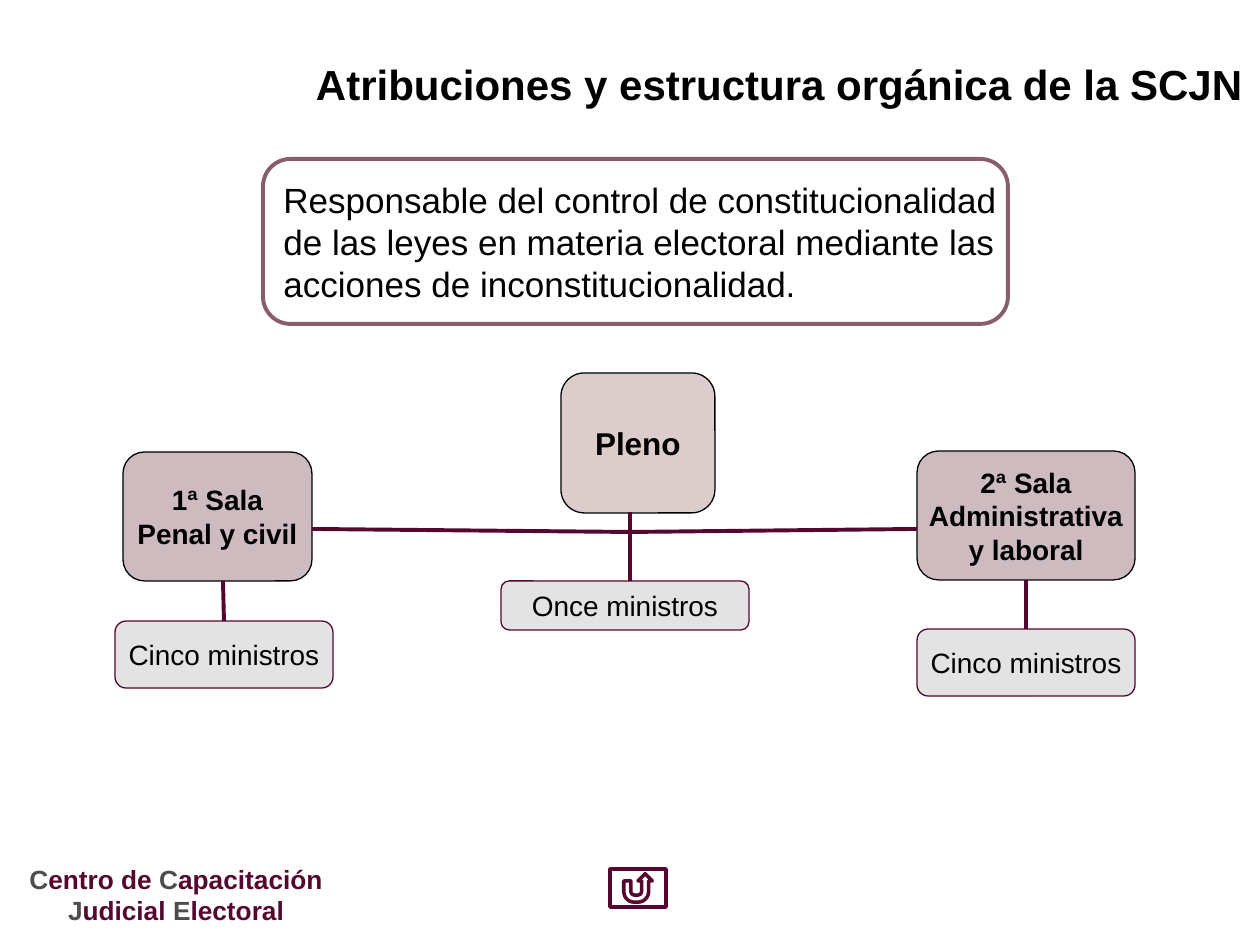
from lxml import etree
from pptx import Presentation
from pptx.dml.color import RGBColor
from pptx.enum import shapes, text
from pptx.oxml import ns
from pptx.util import Emu, Pt

PX = 914400 / 126
TOP, BOTTOM = 0, 2
COLORS = {
    "ink": "000000", "wine": "56072F", "footer": "560730", "gray": "4D4D4D",
    "mauve": "885E6A", "maroon": "580000", "silver": "C0C0C0",
}


def px(*values):
    return [Emu(round(value * PX)) for value in values]


def rgb(name):
    return RGBColor.from_string(COLORS[name])


def fill_shape(shape, color, opacity):
    """Fill with a colour at the given opacity in percent."""
    if color is None:
        shape.fill.background()
        return
    shape.fill.solid()
    shape.fill.fore_color.rgb = rgb(color)
    value = shape.fill._xPr.find(".//" + ns.qn("a:srgbClr"))
    etree.SubElement(value, ns.qn("a:alpha")).set("val", str(opacity * 1000))


def write(shape, lines, size=16, bold=False, align="CENTER", anchor="MIDDLE",
          wrap=False, spacing=None):
    """Write lines; each is a string or a list of (text, colour) spans."""
    frame = shape.text_frame
    frame.word_wrap = wrap
    frame.vertical_anchor = text.MSO_ANCHOR[anchor]
    for index, line in enumerate(lines):
        para = frame.add_paragraph() if index else frame.paragraphs[0]
        para.alignment = text.PP_ALIGN[align]
        if spacing:
            para.line_spacing = spacing
        for words, color in [(line, "ink")] if isinstance(line, str) else line:
            span = para.add_run()
            span.text = words
            span.font.name = "Arial"
            span.font.size = Pt(size)
            span.font.bold = bold
            span.font.color.rgb = rgb(color)


def add_preset(page, kind, place, fill=None, opacity=100, line="ink", width=0.75):
    shape = page.shapes.add_shape(shapes.MSO_SHAPE[kind], *px(*place))
    shape.shadow.inherit = False
    fill_shape(shape, fill, opacity)
    shape.line.color.rgb = rgb(line)
    shape.line.width = Pt(width)
    return shape


def add_box(page, place, lines, fill=None, opacity=100, line="ink", width=0.75,
            **style):
    box = add_preset(page, "ROUNDED_RECTANGLE", place, fill, opacity, line, width)
    write(box, lines, **style)
    return box


def add_ministers(page, place, label):
    return add_box(page, place, [label], "silver", 43, "wine")


def add_label(page, place, lines, **style):
    label = page.shapes.add_textbox(*px(*place))
    write(label, lines, **style)
    return label


def add_link(page, start, end, begin_box=None, end_box=None):
    link = page.shapes.add_connector(shapes.MSO_CONNECTOR.STRAIGHT,
                                     *px(*start, *end))
    link.line.color.rgb = rgb("wine")
    link.line.width = Pt(2.25)
    etree.SubElement(link._element.spPr, ns.qn("a:effectLst"))
    if begin_box is not None:
        link.begin_connect(begin_box, BOTTOM)
    if end_box is not None:
        link.end_connect(end_box, TOP)


def main():
    deck = Presentation()
    deck.slide_width, deck.slide_height = px(1260, 945)
    page = deck.slides.add_slide(deck.slide_layouts[6])

    # Footer
    footer = [
        [("C", "gray"), ("entro de ", "footer"), ("C", "gray"),
         ("apacitación", "footer")],
        [("J", "gray"), ("udicial ", "footer"), ("E", "gray"),
         ("lectoral", "footer")],
    ]
    add_label(page, (11, 858, 330, 76), footer, size=15, bold=True, wrap=True,
              spacing=0.96)

    # Responsibility statement
    add_box(page, (263, 159, 745, 165),
            ["Responsable del control de constitucionalidad",
             "de las leyes en materia electoral mediante las",
             "acciones de inconstitucionalidad."],
            line="mauve", width=2.25, size=20, align="LEFT")

    # Court chambers
    add_box(page, (123, 452, 189, 129), ["1ª Sala", "Penal y civil"],
            "mauve", 42, bold=True)
    add_box(page, (561, 373, 154, 140), ["Pleno"], "maroon", 20,
            size=18, bold=True, wrap=True)
    second = add_box(page, (917, 451, 218, 129),
                     ["2ª Sala", "Administrativa", "y laboral"],
                     "mauve", 42, bold=True)

    # Ministers in each chamber
    first_ministers = add_ministers(page, (115, 621, 218, 67), "Cinco ministros")
    second_ministers = add_ministers(page, (917, 629, 218, 67), "Cinco ministros")
    add_ministers(page, (501, 581, 248, 49), "Once ministros")

    # Title
    add_label(page, (295, 52, 960, 64),
              ["Atribuciones y estructura orgánica de la SCJN"],
              size=24, bold=True, align="RIGHT", anchor="TOP")

    # Links
    hub = (630, 532)
    for side in (312, 917):
        add_link(page, hub, (side, 529))
    add_link(page, (223, 581), (223, 621), end_box=first_ministers)
    add_link(page, (630, 512), (630, 581))
    add_link(page, (1026, 580), (1026, 629), second, second_ministers)

    # Return button
    add_preset(page, "ACTION_BUTTON_RETURN", (610, 869, 56, 38),
               line="wine", width=2)

    deck.save("out.pptx")


if __name__ == "__main__":
    main()
